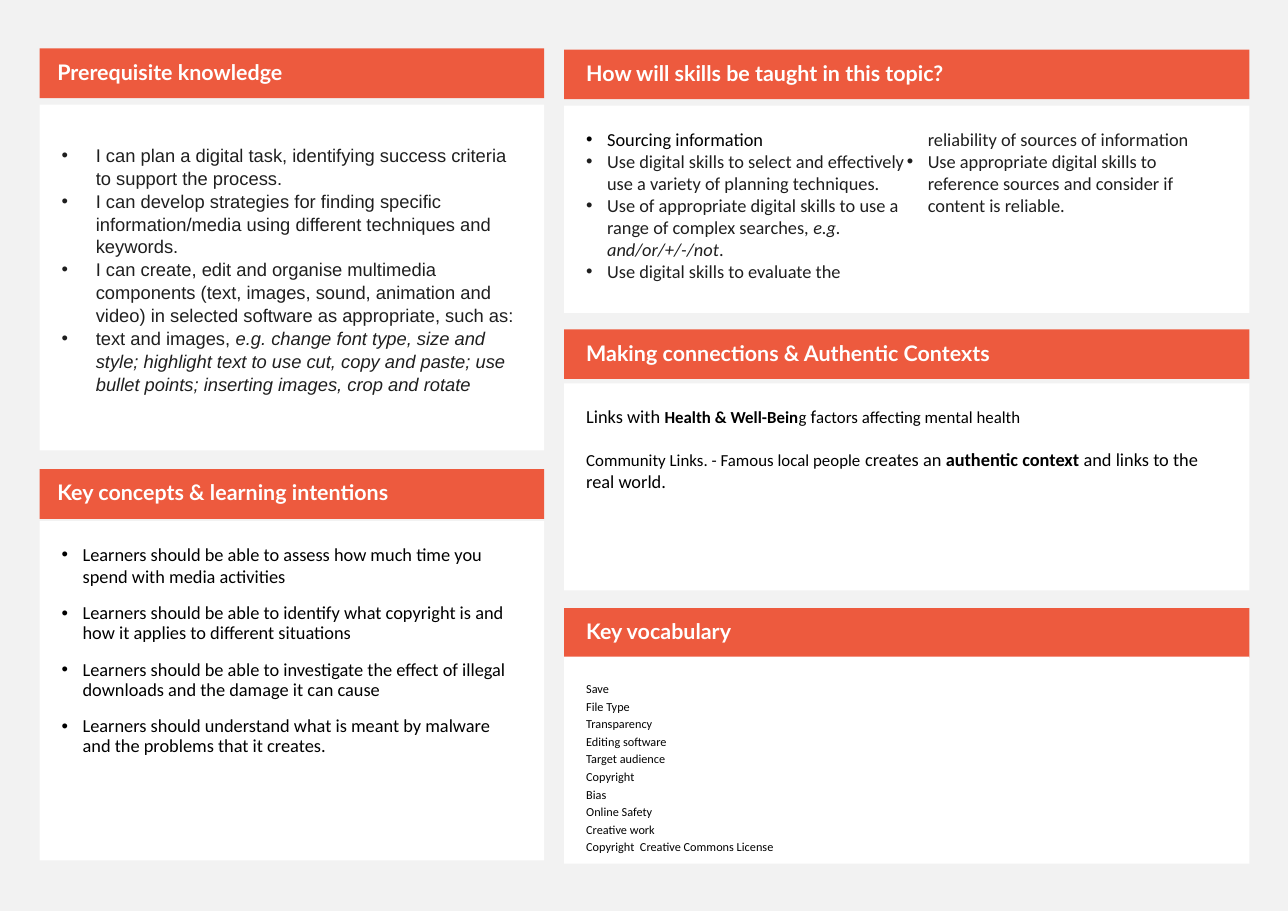
from lxml import etree
from pptx import Presentation
from pptx.dml.color import RGBColor
from pptx.enum.shapes import MSO_SHAPE
from pptx.enum.text import MSO_ANCHOR, PP_ALIGN
from pptx.oxml.ns import qn
from pptx.util import Inches, Pt

RECT = MSO_SHAPE.RECTANGLE
TOP, MIDDLE = MSO_ANCHOR.TOP, MSO_ANCHOR.MIDDLE
LEFT = PP_ALIGN.LEFT

GREY, WHITE, ORANGE = "F2F2F2", "FFFFFF", "ED5A3E"
BLACK, INK = "000000", "1F1F1F"

# Content: a paragraph is a list of runs (text, style overrides)
ITALIC, BOLD, SMALL = {"italic": True}, {"bold": True}, {"size": 11}

PREREQUISITES = [
    [("I can plan a digital task, identifying success criteria to support the process.", {})],
    [("I can develop strategies for finding specific information/media using different "
      "techniques and keywords.", {})],
    [("I can create, edit and organise multimedia components (text, images, sound, "
      "animation and video) in selected software as appropriate, such as:", {})],
    [("text and images, ", {}),
     ("e.g. change font type, size and style; highlight text to use cut, copy and paste; "
      "use bullet points; inserting images, crop and rotate", ITALIC)],
]
INTENTIONS = [
    [("Learners should be able to assess how much time you spend with media activities", {})],
    [("Learners should be able to identify what copyright is and how it applies to "
      "different situations", {})],
    [("Learners should be able to investigate the effect of illegal downloads and the "
      "damage it can cause", {})],
    [("Learners should understand what is meant by malware and the problems that it "
      "creates.", {})],
]
SKILLS = [
    [("Sourcing information", {"color": BLACK})],
    [("Use digital skills to select and effectively use a variety of planning techniques.", {})],
    [("Use of appropriate digital skills to use a range of complex searches, ", {}),
     ("e.g. and/or/+/-/not", ITALIC), (".", {})],
    [("Use digital skills to evaluate the reliability of sources of information", {})],
    [("Use appropriate digital skills to reference sources and consider if content "
      "is reliable.", {})],
]
CONNECTIONS = [
    [("Links with ", {}), ("Health & Well-Bein", {**SMALL, **BOLD}), ("g", SMALL),
     (" f", {}), ("actors affecting mental health", SMALL)],
    [("Community Links. - Famous local people", SMALL), (" creates an ", {}),
     ("authentic context", BOLD), (" and links to the real world.", {})],
]
VOCABULARY = [[(word, {})] for word in (
    "Save", "File Type", "Transparency", "Editing software", "Target audience",
    "Copyright", "Bias", "Online Safety", "Creative work",
    "Copyright  Creative Commons License")]

# Columns: left, width, title inset
LEFT_COL, RIGHT_COL = (0.36, 4.58, 0.16), (5.12, 6.22, 0.2)
TITLE_H, PAD = 0.45, 0.2

# Panels: column, title, title top, body top, body height, paragraphs, body format
PANELS = [
    (LEFT_COL, "Prerequisite knowledge", 0.44, 0.95, 3.14, PREREQUISITES,
     {"font": "Arial", "color": INK, "indent": 0.31, "top": 0.35, "spacing": 1.04}),
    (LEFT_COL, "Key concepts & learning intentions", 4.26, 4.73, 3.08, INTENTIONS,
     {"indent": 0.19, "next_spacing": 0.9, "before": 11}),
    (RIGHT_COL, "How will skills be taught in this topic?", 0.45, 0.96, 1.88, SKILLS,
     {"color": INK, "indent": 0.19, "columns": 2}),
    (RIGHT_COL, "Making connections & Authentic Contexts", 2.99, 3.48, 1.88, CONNECTIONS,
     {"before": 13.4}),
    (RIGHT_COL, "Key vocabulary", 5.52, 5.96, 1.88, VOCABULARY,
     {"size": 8, "spacing": 1.2}),
]


def rgb(color):
    return RGBColor.from_string(color)


def add_box(s, left, top, width, height, fill, anchor, insets):
    sp = s.shapes.add_shape(RECT, *map(Inches, (left, top, width, height)))
    sp.shadow.inherit = False
    sp.fill.solid()
    sp.fill.fore_color.rgb = rgb(fill)
    sp.line.fill.background()
    tf = sp.text_frame
    tf.word_wrap = True
    tf.vertical_anchor = anchor
    tf.margin_left, tf.margin_top, tf.margin_right, tf.margin_bottom = map(Inches, insets)
    return tf


def add_run(p, text, font="Calibri", size=12, color=BLACK, bold=False, italic=False):
    r = p.add_run()
    r.text = text
    r.font.name, r.font.size = font, Pt(size)
    r.font.bold, r.font.italic = bold, italic
    r.font.color.rgb = rgb(color)


def add_bullet(p, indent):
    pPr = p._p.get_or_add_pPr()
    pPr.set("marL", str(Inches(indent)))
    pPr.set("indent", str(-Inches(indent)))
    etree.SubElement(pPr, qn("a:buFont")).set("typeface", "Arial")
    etree.SubElement(pPr, qn("a:buChar")).set("char", "•")


def write_body(tf, paragraphs, fmt):
    base = {key: fmt[key] for key in ("font", "size", "color") if key in fmt}
    spacing = fmt.get("spacing", 1.0)
    for i, runs in enumerate(paragraphs):
        p = tf.add_paragraph() if i else tf.paragraphs[0]
        p.alignment = LEFT
        p.line_spacing = fmt.get("next_spacing", spacing) if i else spacing
        p.space_before = Pt(fmt.get("before", 0) if i else 0)
        if "indent" in fmt:
            add_bullet(p, fmt["indent"])
        for text, style in runs:
            add_run(p, text, **{**base, **style})


def main():
    prs = Presentation()
    prs.slide_width, prs.slide_height = Inches(11.69), Inches(8.27)
    s = prs.slides.add_slide(prs.slide_layouts[6])
    s.background.fill.solid()
    s.background.fill.fore_color.rgb = rgb(GREY)

    for (left, width, inset), title, title_top, top, height, paragraphs, fmt in PANELS:
        # Title bar
        tf = add_box(s, left, title_top, width, TITLE_H, ORANGE, MIDDLE,
                     (inset, 0.05, 0.1, 0.05))
        p = tf.paragraphs[0]
        p.alignment, p.line_spacing = LEFT, 0.9
        add_run(p, title, "Lato", 14, WHITE, bold=True)

        # Body panel
        tf = add_box(s, left, top, width, height, WHITE, TOP,
                     (PAD, fmt.get("top", PAD), PAD, PAD))
        tf._txBody.bodyPr.set("numCol", str(fmt.get("columns", 1)))
        write_body(tf, paragraphs, fmt)

    prs.save("out.pptx")


if __name__ == "__main__":
    main()
